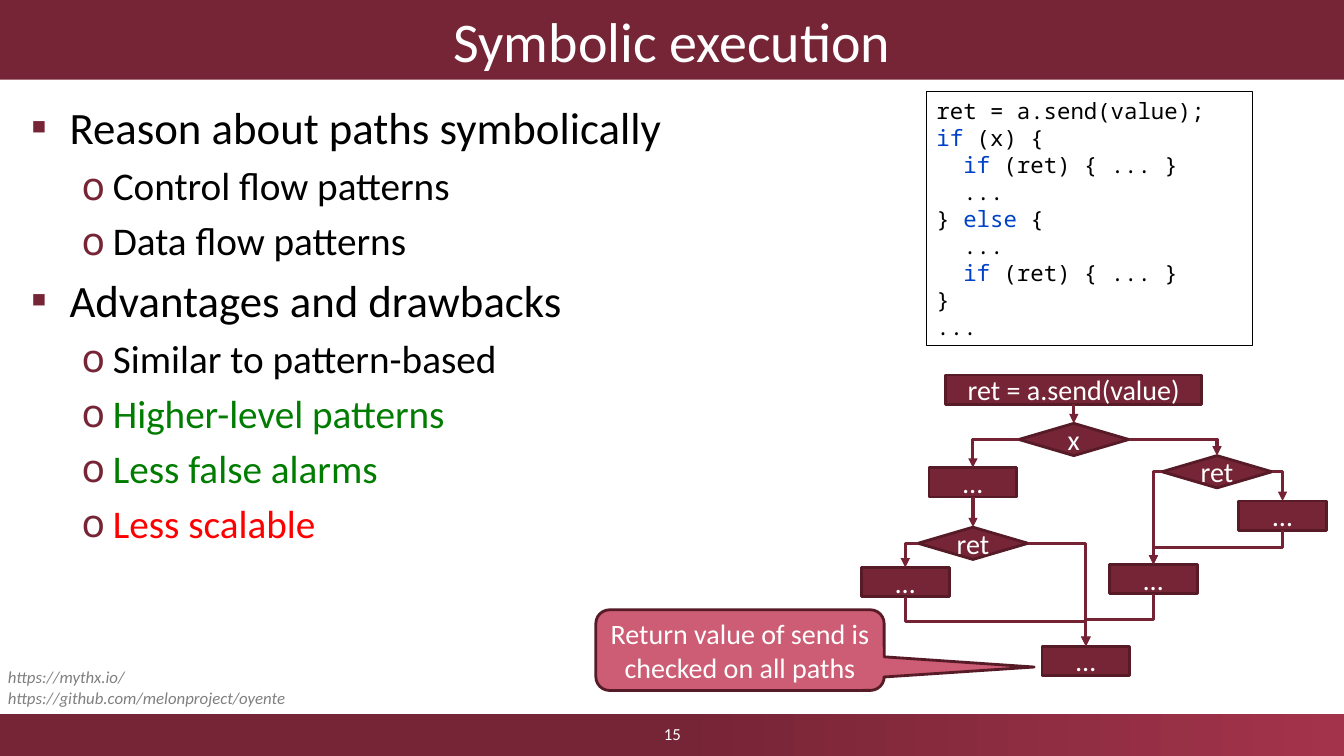
from lxml.etree import SubElement
from pptx import Presentation
from pptx.dml.color import RGBColor
from pptx.enum.shapes import MSO_CONNECTOR, MSO_SHAPE
from pptx.enum.text import MSO_ANCHOR, MSO_AUTO_SIZE, PP_ALIGN
from pptx.oxml.ns import qn
from pptx.util import Inches, Pt

COLORS = {
    "maroon": "762536", "bright": "A3334B", "edge": "571B28", "arrow": "752234",
    "callout": "CC5D74", "white": "FFFFFF", "black": "000000", "grey": "808080",
    "keyword": "0042C8", "good": "007D00", "bad": "FF0000",
}
SANS, MONO = "Calibri", "Noto Sans Mono"

# Level, text, colour
BULLETS = [
    (0, "Reason about paths symbolically", "black"),
    (1, "Control flow patterns", "black"),
    (1, "Data flow patterns", "black"),
    (0, "Advantages and drawbacks", "black"),
    (1, "Similar to pattern-based", "black"),
    (1, "Higher-level patterns", "good"),
    (1, "Less false alarms", "good"),
    (1, "Less scalable", "bad"),
]
# Size, left margin, hanging indent, bullet sign, bullet font
LEVELS = [(32, 0.38, 0.38, "▪", SANS), (28, 0.81, 0.31, "o", MONO)]

# Keywords stand between bars
CODE = [
    "ret = a.send(value);",
    "|if| (x) {",
    "  |if| (ret) { ... }",
    "  ...",
    "} |else| {",
    "  ...",
    "  |if| (ret) { ... }",
    "}",
    "...",
]

# Kind: preset shape, width, height
KINDS = {
    "call": (MSO_SHAPE.RECTANGLE, 2.54, 0.29),
    "step": (MSO_SHAPE.RECTANGLE, 0.87, 0.29),
    "test": (MSO_SHAPE.FLOWCHART_DECISION, 1.09, 0.32),
}
# Name: kind, text, centre x, top
NODES = {
    "send": ("call", "ret = a.send(value)", 10.65, 3.72),
    "test x": ("test", "x", 10.65, 4.2),
    "then": ("step", "…", 9.65, 4.64),
    "then ret": ("test", "ret", 9.65, 5.23),
    "then checked": ("step", "…", 8.98, 5.63),
    "else ret": ("test", "ret", 12.07, 4.52),
    "else checked": ("step", "…", 12.72, 4.97),
    "else join": ("step", "…", 11.44, 5.6),
    "end": ("step", "…", 10.77, 6.41),
}
# From, to, side on which the arrow leaves
ARROWS = [
    ("send", "test x", "bottom"),
    ("test x", "else ret", "right"),
    ("test x", "then", "left"),
    ("then", "then ret", "bottom"),
    ("then ret", "then checked", "left"),
    ("then checked", "end", "bottom"),
    ("then ret", "end", "right"),
    ("else ret", "else join", "left"),
    ("else ret", "else checked", "right"),
    ("else checked", "else join", "bottom"),
    ("else join", "end", "bottom"),
]


def rgb(name):
    return RGBColor.from_string(COLORS[name])


class SlideBuilder:
    def __init__(self, page):
        self.page = page

    def place(self, shape, left, top, width, height):
        shape.left, shape.top = Inches(left), Inches(top)
        shape.width, shape.height = Inches(width), Inches(height)

    def format_run(self, span, size, color, font=SANS, italic=False):
        span.font.size, span.font.name = Pt(size), font
        span.font.color.rgb = rgb(color)
        span.font.italic = italic

    def set_text(self, box, text, size, color="white", align=PP_ALIGN.CENTER,
                 anchor=MSO_ANCHOR.MIDDLE, italic=False):
        frame = box.text_frame
        frame.text = text
        frame.word_wrap = True
        frame.vertical_anchor = anchor
        for para in frame.paragraphs:
            para.alignment = align
            for span in para.runs:
                self.format_run(span, size, color, italic=italic)

    def title(self, text):
        box = self.page.shapes.title
        self.place(box, 0, 0, 13.33, 0.79)
        box.fill.solid()
        box.fill.fore_color.rgb = rgb("maroon")
        self.set_text(box, text, 40)

    def body(self, bullets):
        box = self.page.placeholders[1]
        self.place(box, 0.21, 0.94, 12.92, 6.05)
        frame = box.text_frame
        frame.text = "\n".join(text for _, text, _ in bullets)
        frame.auto_size = MSO_AUTO_SIZE.NONE
        for number, (para, (level, _, color)) in enumerate(zip(frame.paragraphs, bullets)):
            size, margin, hang, sign, font = LEVELS[level]
            para.level = level
            para.space_before = Pt(size * 0.2 if number else 0)
            properties = para._p.get_or_add_pPr()
            properties.set("marL", str(Inches(margin)))
            properties.set("indent", str(-Inches(hang)))
            bullet_color = SubElement(properties, qn("a:buClr"))
            SubElement(bullet_color, qn("a:srgbClr"), val=COLORS["maroon"])
            SubElement(properties, qn("a:buFont"), typeface=font)
            SubElement(properties, qn("a:buChar"), char=sign)
            self.format_run(para.runs[0], size, color)

    def shape(self, preset, left, top, width, height, fill=None, line=None, weight=2):
        box = self.page.shapes.add_shape(
            preset, Inches(left), Inches(top), Inches(width), Inches(height))
        box.shadow.inherit = False
        if fill:
            box.fill.solid()
            box.fill.fore_color.rgb = rgb(fill)
        else:
            box.fill.background()
        if line:
            box.line.color.rgb = rgb(line)
            box.line.width = Pt(weight)
        else:
            box.line.fill.background()
        return box

    def footer_bar(self):
        bar = self.shape(MSO_SHAPE.RECTANGLE, 0, 7.08, 13.33, 0.42)
        bar.fill.gradient()
        bar.fill.gradient_angle = 0
        for stop, position, color in zip(bar.fill.gradient_stops, (0.5, 1), ("maroon", "bright")):
            stop.position = position
            stop.color.rgb = rgb(color)

    def label(self, text, left, top, width, height, **style):
        box = self.page.shapes.add_textbox(
            Inches(left), Inches(top), Inches(width), Inches(height))
        self.set_text(box, text, 12, **style)

    def code(self, lines, left, top, width, height):
        box = self.shape(MSO_SHAPE.RECTANGLE, left, top, width, height, line="black", weight=0.75)
        frame = box.text_frame
        frame.word_wrap = True
        frame.vertical_anchor = MSO_ANCHOR.TOP
        for row, line in enumerate(lines):
            para = frame.add_paragraph() if row else frame.paragraphs[0]
            para.alignment = PP_ALIGN.LEFT
            para.line_spacing = Pt(19.3)
            for number, part in enumerate(line.split("|")):
                if part:
                    span = para.add_run()
                    span.text = part
                    self.format_run(span, 16, "keyword" if number % 2 else "black", MONO)

    def node(self, kind, text, center, top):
        preset, width, height = KINDS[kind]
        box = self.shape(preset, center - width / 2, top, width, height, "maroon", "edge")
        self.set_text(box, text, 20)

    def arrow(self, source, target, side):
        kind, _, x1, y1 = NODES[source]
        _, _, x2, y2 = NODES[target]
        _, width, height = KINDS[kind]
        preset, turn = "line", 0
        if side != "bottom":
            # Sideways, then down
            preset = "bentConnector2"
            x1 += width / 2 if side == "right" else -width / 2
            y1 += height / 2
        else:
            y1 += height
            if x1 != x2:
                # Down, across, down: an elbow turned by 90 degrees about its centre
                preset, turn = "bentConnector3", 90
                middle_x, middle_y = (x1 + x2) / 2, (y1 + y2) / 2
                half_drop, half_run = (y2 - y1) / 2, (x2 - x1) / 2
                x1, y1 = middle_x - half_drop, middle_y + half_run
                x2, y2 = middle_x + half_drop, middle_y - half_run
        link = self.page.shapes.add_connector(
            MSO_CONNECTOR.ELBOW, Inches(x1), Inches(y1), Inches(x2), Inches(y2))
        link.line.color.rgb = rgb("arrow")
        link.line.width = Pt(2.25)
        properties = link._element.spPr
        properties.find(qn("a:prstGeom")).set("prst", preset)
        if turn:
            properties.find(qn("a:xfrm")).set("rot", str(turn * 60000))
        SubElement(properties.find(qn("a:ln")), qn("a:tailEnd"), type="triangle")
        SubElement(properties, qn("a:effectLst"))


def main():
    deck = Presentation()
    deck.slide_width, deck.slide_height = Inches(13.33), Inches(7.5)
    builder = SlideBuilder(deck.slides.add_slide(deck.slide_layouts[1]))

    # Title, list and footer
    builder.title("Symbolic execution")
    builder.body(BULLETS)
    builder.footer_bar()
    builder.label("15", 5.17, 7.08, 3, 0.4)

    # Callout and code
    callout = builder.shape(MSO_SHAPE.ROUNDED_RECTANGULAR_CALLOUT,
                            5.91, 6.05, 2.86, 0.8, "callout", "edge")
    for number, value in enumerate((1.02, 0.21, 0.17)):
        callout.adjustments[number] = value
    builder.set_text(callout, "Return value of send is checked on all paths", 20)
    builder.code(CODE, 9.19, 0.91, 3.23, 2.52)

    # Control flow graph
    for node in NODES.values():
        builder.node(*node)
    for arrow in ARROWS:
        builder.arrow(*arrow)

    # Links
    builder.label("https://mythx.io/\nhttps://github.com/melonproject/oyente",
                  -0.02, 6.57, 3.41, 0.5, color="grey", align=PP_ALIGN.LEFT,
                  anchor=MSO_ANCHOR.TOP, italic=True)
    deck.save("out.pptx")


if __name__ == "__main__":
    main()
